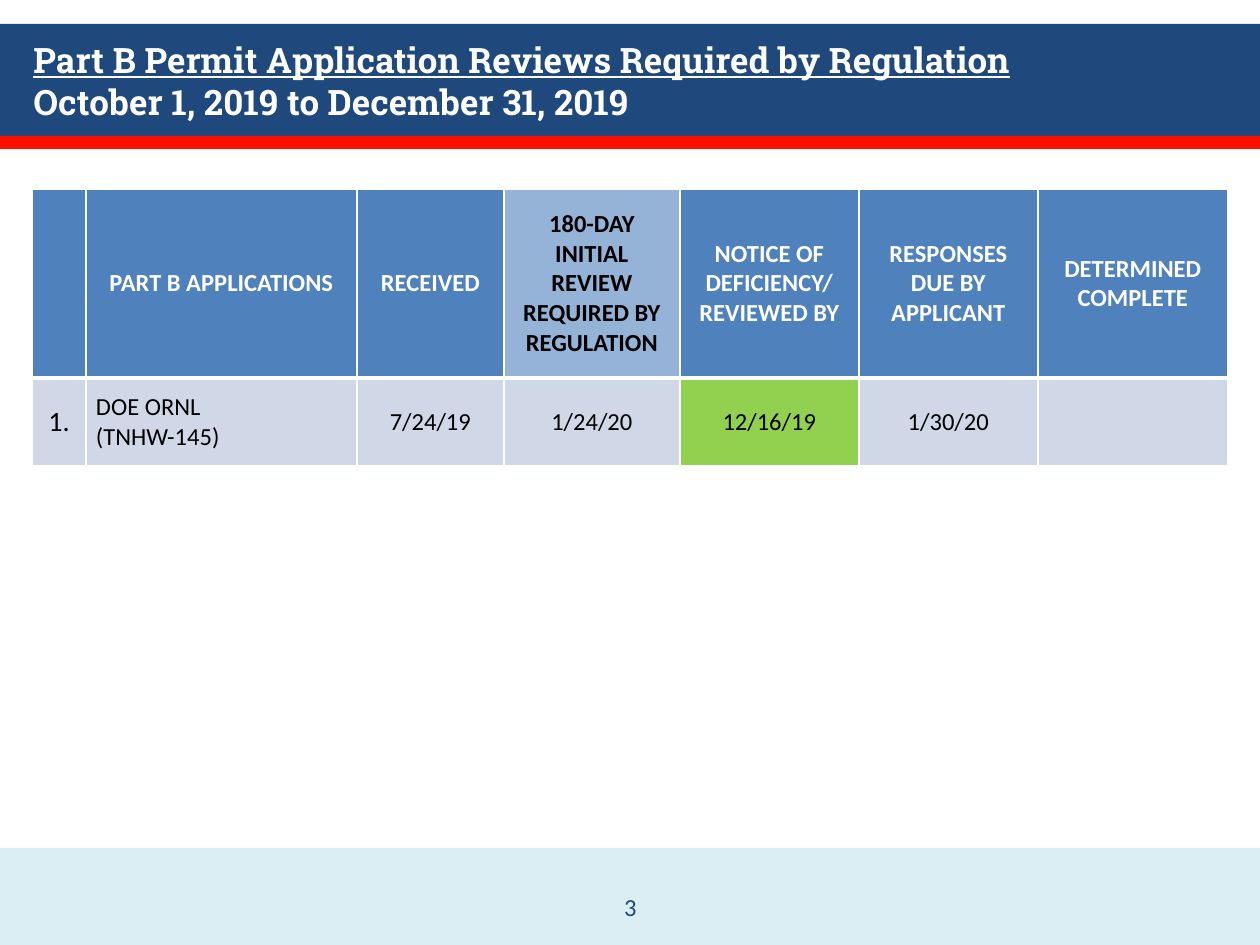
"""Build the Part B permit application review slide."""
from lxml.etree import SubElement
from pptx import Presentation
from pptx.dml.color import RGBColor
from pptx.enum.shapes import MSO_SHAPE
from pptx.enum.text import MSO_ANCHOR, PP_ALIGN
from pptx.oxml.ns import qn
from pptx.util import Pt

PX = 914400 // 126
WIDTH, HEIGHT = 1260, 945

NAVY = RGBColor(0x1F, 0x49, 0x7D)
RED = RGBColor(0xFF, 0x0F, 0x00)
PALE_AQUA = RGBColor(0xDB, 0xEE, 0xF4)
BLUE = RGBColor(0x4F, 0x81, 0xBD)
LIGHT_BLUE = RGBColor(0x95, 0xB3, 0xD7)
PALE_BLUE = RGBColor(0xD0, 0xD8, 0xE8)
GREEN = RGBColor(0x92, 0xD0, 0x50)
WHITE = RGBColor(0xFF, 0xFF, 0xFF)
BLACK = RGBColor(0x00, 0x00, 0x00)

BANDS = [(24, 112, NAVY), (136, 13, RED), (848, 97, PALE_AQUA)]
TITLE = "Part B Permit Application Reviews Required by Regulation"
PERIOD = "October 1, 2019 to December 31, 2019"
PAGE_NUMBER = "3"

COLUMN_WIDTHS = [54, 271, 147, 176, 179, 179, 190]
ROW_HEIGHTS = [189, 88]
REVIEWS = [
    [[], ["PART B APPLICATIONS"], ["RECEIVED"],
     ["180-DAY INITIAL REVIEW", "REQUIRED BY REGULATION"],
     ["NOTICE OF DEFICIENCY/ REVIEWED BY"], ["RESPONSES DUE BY APPLICANT"],
     ["DETERMINED COMPLETE"]],
    [["1."], ["DOE ORNL", "(TNHW-145)"], ["7/24/19"], ["1/24/20"],
     ["12/16/19"], ["1/30/20"], []],
]
ROW_STYLES = [(BLUE, WHITE, True), (PALE_BLUE, BLACK, False)]
HIGHLIGHTS = {(0, 3): (LIGHT_BLUE, BLACK), (1, 4): (GREEN, BLACK)}
LEFT_ALIGNED = (1, 1)
ITEM_NUMBER = (1, 0)


def add_run(paragraph, text, size, color, font="Calibri", bold=False, underline=False):
    run = paragraph.add_run()
    run.text = text
    run.font.size = Pt(size)
    run.font.name = font
    run.font.bold = bold
    run.font.underline = underline
    run.font.color.rgb = color


def add_text_frame(slide, left, top, width, height, anchor):
    frame = slide.shapes.add_textbox(left * PX, top * PX, width * PX, height * PX).text_frame
    frame.word_wrap = True
    frame.vertical_anchor = anchor
    return frame


def set_borders(cell, row):
    top, bottom = (1, 3) if row == 0 else (3, 1)
    properties = cell._tc.get_or_add_tcPr()
    for side, points in (("L", 1), ("R", 1), ("T", top), ("B", bottom)):
        border = SubElement(properties, qn(f"a:ln{side}"), w=str(Pt(points)))
        SubElement(SubElement(border, qn("a:solidFill")), qn("a:srgbClr"), val=str(WHITE))


def fill_cell(cell, row, column, lines):
    fill, color, bold = ROW_STYLES[row]
    fill, color = HIGHLIGHTS.get((row, column), (fill, color))
    set_borders(cell, row)
    cell.fill.solid()
    cell.fill.fore_color.rgb = fill
    cell.margin_left = cell.margin_right = 10 * PX
    cell.margin_top = cell.margin_bottom = 0
    cell.vertical_anchor = MSO_ANCHOR.MIDDLE
    frame = cell.text_frame
    for index, line in enumerate(lines):
        paragraph = frame.add_paragraph() if index else frame.paragraphs[0]
        left_aligned = (row, column) == LEFT_ALIGNED
        paragraph.alignment = PP_ALIGN.LEFT if left_aligned else PP_ALIGN.CENTER
        add_run(paragraph, line, 16 if (row, column) == ITEM_NUMBER else 14, color, bold=bold)


def add_reviews(slide):
    reviews = slide.shapes.add_table(
        len(ROW_HEIGHTS), len(COLUMN_WIDTHS), 32 * PX, 189 * PX,
        sum(COLUMN_WIDTHS) * PX, sum(ROW_HEIGHTS) * PX).table
    reviews.first_row = reviews.horz_banding = False
    for column, width in zip(reviews.columns, COLUMN_WIDTHS):
        column.width = width * PX
    for row, height in zip(reviews.rows, ROW_HEIGHTS):
        row.height = height * PX
    for row, entries in enumerate(REVIEWS):
        for column, lines in enumerate(entries):
            fill_cell(reviews.cell(row, column), row, column, lines)


def main():
    deck = Presentation()
    deck.slide_width, deck.slide_height = WIDTH * PX, HEIGHT * PX
    slide = deck.slides.add_slide(deck.slide_layouts[6])

    for top, height, color in BANDS:
        band = slide.shapes.add_shape(
            MSO_SHAPE.RECTANGLE, 0, top * PX, WIDTH * PX, height * PX)
        band.shadow.inherit = False
        band.fill.solid()
        band.fill.fore_color.rgb = color
        band.line.fill.background()

    add_reviews(slide)

    heading = add_text_frame(slide, 21, 24, 1218, 113, MSO_ANCHOR.MIDDLE).paragraphs[0]
    add_run(heading, TITLE, 20, WHITE, "Roboto Slab", True, True)
    heading.add_line_break()
    add_run(heading, PERIOD, 20, WHITE, "Roboto Slab", True)

    footer = add_text_frame(slide, 431, 878, 399, 50, MSO_ANCHOR.BOTTOM).paragraphs[0]
    footer.alignment = PP_ALIGN.CENTER
    add_run(footer, PAGE_NUMBER, 14, NAVY)

    deck.save("out.pptx")


if __name__ == "__main__":
    main()
